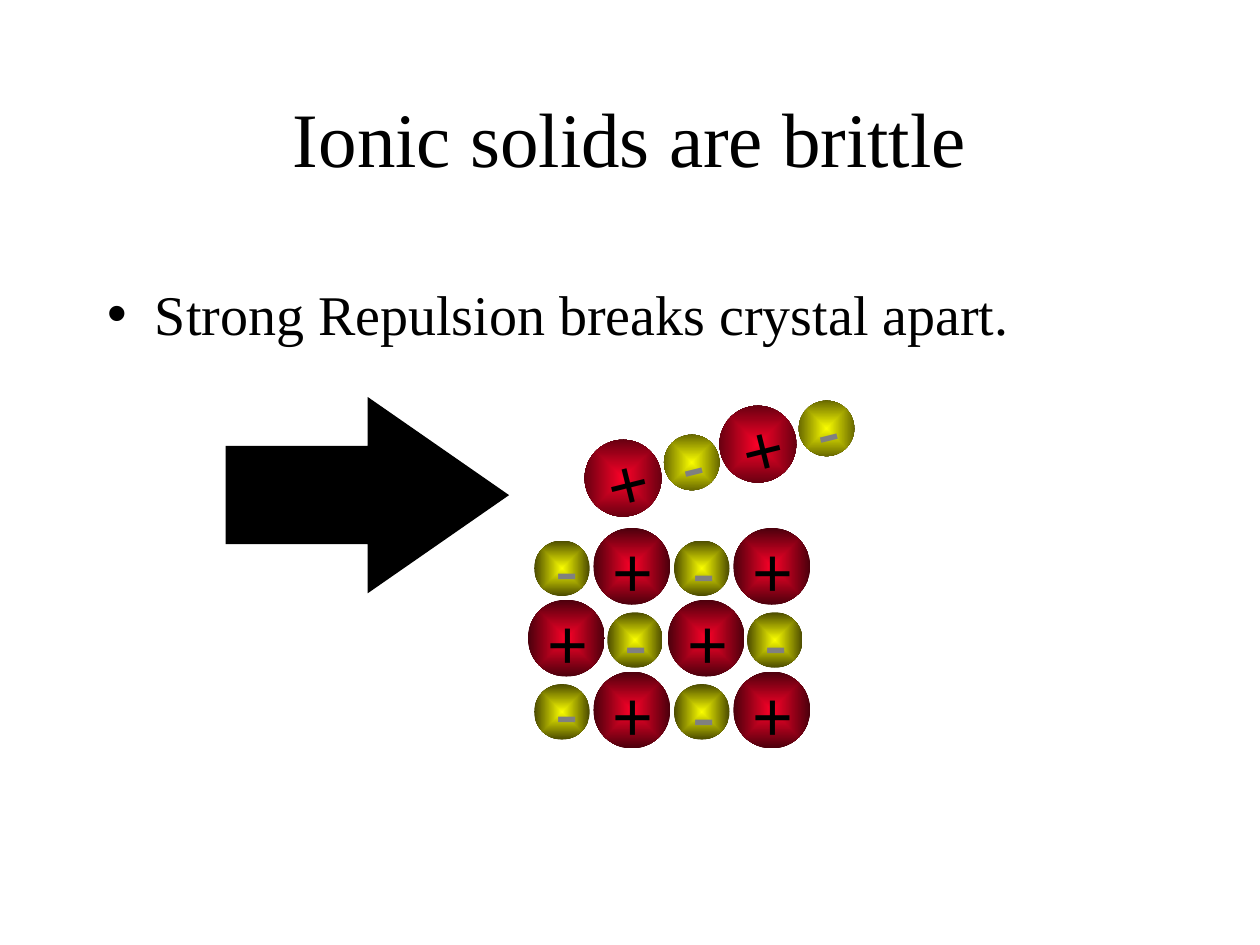
from dataclasses import dataclass

import lxml.etree
import pptx
import pptx.dml.color
import pptx.enum.shapes
import pptx.enum.text
import pptx.oxml
import pptx.oxml.ns
import pptx.util

Inches = pptx.util.Inches
RGBColor = pptx.dml.color.RGBColor
SHAPES = pptx.enum.shapes.MSO_SHAPE
AUTO_SIZE = pptx.enum.text.MSO_AUTO_SIZE
ALIGN = pptx.enum.text.PP_ALIGN
qn = pptx.oxml.ns.qn

BLACK = RGBColor(0x00, 0x00, 0x00)
GRAY = RGBColor(0x80, 0x80, 0x80)
RED = RGBColor(0xFC, 0x01, 0x28)
DARK_RED = RGBColor(0x4B, 0x00, 0x0C)
YELLOW = RGBColor(0xFA, 0xFD, 0x00)
DARK_YELLOW = RGBColor(0x4B, 0x4B, 0x00)

LABEL_HEIGHT = 0.77


@dataclass
class Ion:
    sign: str
    diameter: float
    center_color: RGBColor
    edge_color: RGBColor
    sign_color: RGBColor
    label_width: float


CATION = Ion("+", 0.61, RED, DARK_RED, BLACK, 0.49)
ANION = Ion("-", 0.44, YELLOW, DARK_YELLOW, GRAY, 0.5)


def place(shape, left, top, width, height):
    shape.left, shape.top = Inches(left), Inches(top)
    shape.width, shape.height = Inches(width), Inches(height)


def add_run(para, text, font_name, size, color):
    run = para.add_run()
    run.text = text
    run.font.name = font_name
    run.font.size = pptx.util.Pt(size)
    run.font.color.rgb = color


def set_space_before(para, percent):
    """Set spacing before the paragraph relative to its text size."""
    properties = para._p.get_or_add_pPr()
    spacing = lxml.etree.SubElement(properties, qn("a:spcBef"))
    lxml.etree.SubElement(spacing, qn("a:spcPct")).set("val", str(percent * 1000))


def fill_radially(shape, center_color, edge_color):
    shape.fill.gradient()
    for stop, color in zip(shape.fill.gradient_stops, (center_color, edge_color)):
        stop.color.rgb = color
    gradient = shape._element.spPr.find(qn("a:gradFill"))
    gradient.remove(gradient.find(qn("a:lin")))
    gradient.find(qn("a:gsLst")).addnext(pptx.oxml.parse_xml(
        f'<a:path {pptx.oxml.ns.nsdecls("a")} path="shape">'
        '<a:fillToRect l="50000" t="50000" r="50000" b="50000"/></a:path>'))


def add_ion(group, ion, left, top, label_shift, rotation):
    ball = group.shapes.add_shape(
        SHAPES.OVAL, Inches(left), Inches(top), Inches(ion.diameter), Inches(ion.diameter))
    ball.rotation = rotation
    ball.shadow.inherit = False
    ball.line.fill.background()
    fill_radially(ball, ion.center_color, ion.edge_color)

    shift_x, shift_y = label_shift
    label = group.shapes.add_textbox(
        Inches(left + shift_x), Inches(top + shift_y),
        Inches(ion.label_width), Inches(LABEL_HEIGHT))
    label.rotation = rotation
    label.text_frame.word_wrap = True
    label.text_frame.auto_size = AUTO_SIZE.SHAPE_TO_FIT_TEXT
    para = label.text_frame.paragraphs[0]
    set_space_before(para, 50)
    add_run(para, ion.sign, "Arial", 40, ion.sign_color)


def add_ion_row(slide, cation_at, anion_at, cation_shift, anion_shifts,
                pitch=(1.11, 0), rotation=0):
    """Group two cation-anion pairs; the shifts place each sign against its ball."""
    group = slide.shapes.add_group_shape()
    for pair, anion_shift in enumerate(anion_shifts):
        for ion, (left, top), shift in ((CATION, cation_at, cation_shift),
                                        (ANION, anion_at, anion_shift)):
            add_ion(group, ion, left + pair * pitch[0], top + pair * pitch[1],
                    shift, rotation)


def add_force_arrow(slide):
    arrow = slide.shapes.add_shape(
        SHAPES.RIGHT_ARROW, Inches(1.79), Inches(3.15), Inches(2.25), Inches(1.56))
    arrow.adjustments[0] = 0.5
    arrow.adjustments[1] = 0.72
    arrow.shadow.inherit = False
    arrow.fill.solid()
    arrow.fill.fore_color.rgb = BLACK
    arrow.line.fill.background()


def fill_title(title, text):
    place(title, 0.75, 0.67, 8.5, 1.25)
    title.text_frame.vertical_anchor = pptx.enum.text.MSO_ANCHOR.TOP
    title.text_frame.auto_size = AUTO_SIZE.SHAPE_TO_FIT_TEXT
    para = title.text_frame.paragraphs[0]
    para.alignment = ALIGN.CENTER
    add_run(para, text, "Times New Roman", 44, BLACK)


def fill_body(body, text):
    place(body, 0.75, 2.17, 8.5, 4.5)
    body.text_frame.auto_size = AUTO_SIZE.NONE
    para = body.text_frame.paragraphs[0]
    set_space_before(para, 20)
    properties = para._p.get_or_add_pPr()
    properties.set("marL", str(Inches(0.38)))
    properties.set("indent", str(Inches(-0.38)))
    lxml.etree.SubElement(properties, qn("a:buChar")).set("char", "•")
    add_run(para, text, "Times New Roman", 32, BLACK)


def main():
    deck = pptx.Presentation()
    deck.slide_width, deck.slide_height = Inches(10), Inches(7.5)
    slide = deck.slides.add_slide(deck.slide_layouts[1])
    body = slide.placeholders[1]

    fill_title(slide.shapes.title, "Ionic solids are brittle")
    add_ion_row(slide, (4.64, 3.49), (5.27, 3.45), (0.08, -0.05),
                [(0.03, -0.17)] * 2, pitch=(1.07, -0.27), rotation=346)
    outer_shifts = [(0.07, -0.17), (0.05, -0.15)]
    add_ion_row(slide, (4.71, 4.19), (4.24, 4.29), (0.05, -0.05), outer_shifts)
    add_ion_row(slide, (4.19, 4.76), (4.82, 4.86), (0.06, -0.05), [(0.04, -0.15)] * 2)
    add_ion_row(slide, (4.71, 5.33), (4.24, 5.43), (0.05, -0.05), outer_shifts)
    add_force_arrow(slide)
    fill_body(body, "Strong Repulsion breaks crystal apart.")
    slide.shapes._spTree.append(body._element)
    deck.save("out.pptx")


if __name__ == "__main__":
    main()
